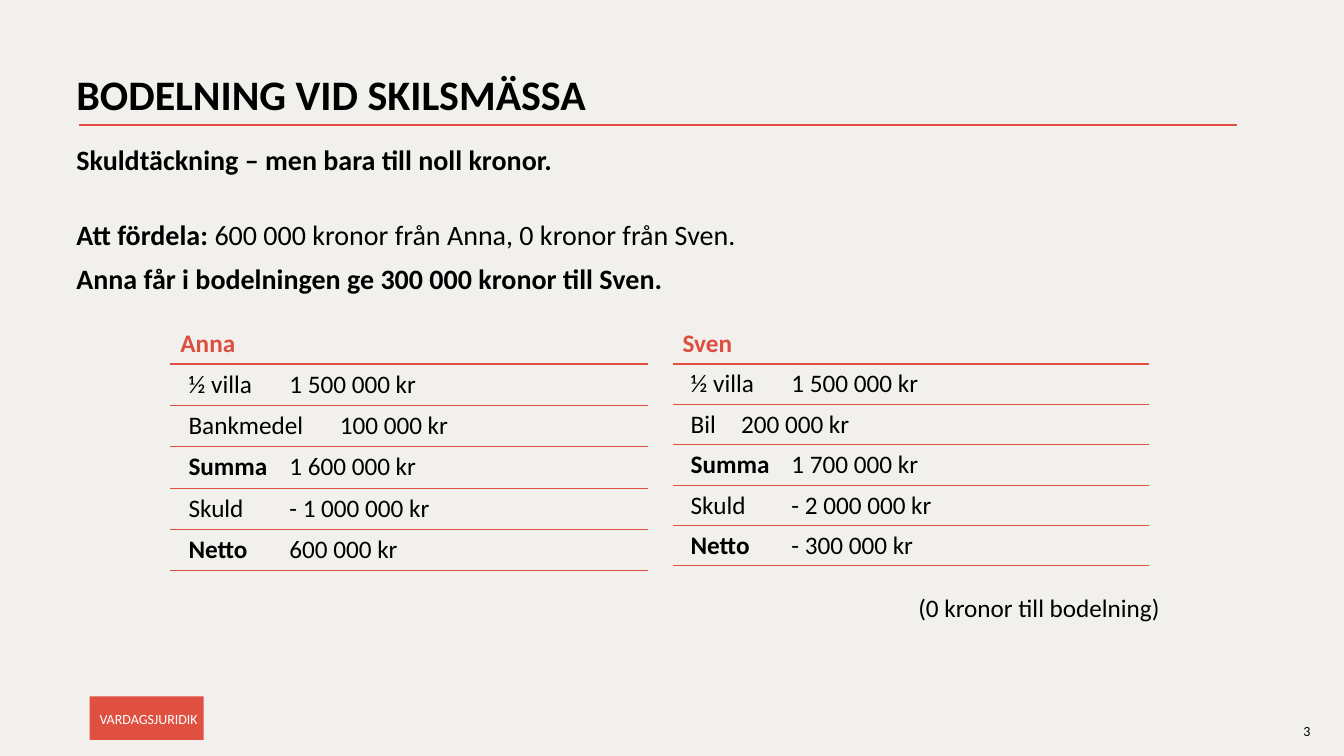
from lxml.etree import SubElement
from pptx import Presentation
from pptx.dml.color import RGBColor
from pptx.enum.shapes import MSO_CONNECTOR as CONNECTOR, MSO_SHAPE as SHAPE
from pptx.enum.text import MSO_ANCHOR as ANCHOR
from pptx.oxml.ns import qn
from pptx.util import Inches, Pt

BACKGROUND = RGBColor(0xF1, 0xF0, 0xEC)
RED = RGBColor(0xE0, 0x50, 0x40)
HEADING_RED = RGBColor(0xDD, 0x4E, 0x3E)
BLACK = RGBColor(0, 0, 0)
WHITE = RGBColor(0xFF, 0xFF, 0xFF)
FONT = "Calibri"
HEADING_HEIGHT = 0.4

INTRODUCTION = [
    ([("Skuldtäckning – men bara till noll kronor.", True)], 0),
    ([("Att fördela: ", True), ("600 000 kronor från Anna, 0 kronor från Sven.", False)], 32),
    ([("Anna får i bodelningen ge 300 000 kronor till Sven.", True)], 10),
]
ANNA = [
    ("½ villa", "1 500 000 kr"),
    ("Bankmedel", "100 000 kr"),
    ("Summa", "1 600 000 kr"),
    ("Skuld", "- 1 000 000 kr"),
    ("Netto", "600 000 kr"),
]
SVEN = [
    ("½ villa", "1 500 000 kr"),
    ("Bil", "200 000 kr"),
    ("Summa", "1 700 000 kr"),
    ("Skuld", "- 2 000 000 kr"),
    ("Netto", "- 300 000 kr"),
]
TOTALS = ("Summa", "Netto")


def write_runs(paragraph, runs, size=18, color=BLACK, line_spacing=None, space_before=0):
    """Add (text, bold) runs to a paragraph."""
    if line_spacing:
        paragraph.line_spacing = line_spacing
    if space_before:
        paragraph.space_before = Pt(space_before)
    for text, bold in runs:
        run = paragraph.add_run()
        run.text = text
        run.font.name = FONT
        run.font.size = Pt(size)
        run.font.bold = bold
        run.font.color.rgb = color


def add_text(slide, box, text, bold=False, anchor=ANCHOR.TOP, **style):
    """Place a one-paragraph text box."""
    frame = slide.shapes.add_textbox(*map(Inches, box)).text_frame
    frame.word_wrap = True
    frame.vertical_anchor = anchor
    write_runs(frame.paragraphs[0], [(text, bold)], **style)


def add_title(slide, box):
    """Place the heading and the rule under it."""
    left, top, width, height = box
    add_text(slide, box, "BODELNING VID SKILSMÄSSA", bold=True, anchor=ANCHOR.MIDDLE,
             size=30, line_spacing=0.9)
    start, rule_top = left + 0.12, top + height - 0.02
    rule = slide.shapes.add_connector(CONNECTOR.STRAIGHT, *map(
        Inches, (start, rule_top, start + width - 0.01, rule_top)))
    rule.line.color.rgb = RED
    rule.line.width = Pt(1.5)
    SubElement(rule._element.spPr, qn("a:effectLst"))


def add_introduction(slide, box):
    """Place the paragraphs above the tables."""
    frame = slide.shapes.add_textbox(*map(Inches, box)).text_frame
    frame.word_wrap = True
    for index, (runs, space_before) in enumerate(INTRODUCTION):
        paragraph = frame.add_paragraph() if index else frame.paragraphs[0]
        write_runs(paragraph, runs, size=20, line_spacing=0.9, space_before=space_before)


def set_borders(cell, top, bottom):
    """Draw red lines above and below a cell, with widths in points."""
    properties = cell._tc.get_or_add_tcPr()
    for tag, width in (("a:lnL", 0), ("a:lnR", 0), ("a:lnT", top), ("a:lnB", bottom)):
        line = SubElement(properties, qn(tag), w=str(Pt(width)))
        if width:
            fill = SubElement(line, qn("a:solidFill"))
            SubElement(fill, qn("a:srgbClr"), val=str(RED))
        else:
            SubElement(line, qn("a:noFill"))
    cell.fill.background()


def add_estate(slide, box, name, entries, row_height):
    """Place the table of one person's assets and debts."""
    table = slide.shapes.add_table(len(entries) + 1, 1, *map(Inches, box)).table
    table.first_row = table.horz_banding = False
    table.rows[0].height = Inches(HEADING_HEIGHT)
    heading = table.cell(0, 0)
    write_runs(heading.text_frame.paragraphs[0], [(name, True)], color=HEADING_RED)
    set_borders(heading, top=0, bottom=1)
    for index, (label, amount) in enumerate(entries, start=1):
        table.rows[index].height = Inches(row_height)
        cell = table.cell(index, 0)
        cell.margin_left = Inches(0.18)
        cell.vertical_anchor = ANCHOR.MIDDLE
        write_runs(cell.text_frame.paragraphs[0],
                   [(label, label in TOTALS), ("\t" + amount, False)])
        set_borders(cell, top=1 if index == 1 else 0.5, bottom=0.5)


def add_badge(slide, box):
    """Place the red subject label."""
    badge = slide.shapes.add_shape(SHAPE.RECTANGLE, *map(Inches, box))
    badge.shadow.inherit = False
    badge.fill.solid()
    badge.fill.fore_color.rgb = RED
    badge.line.fill.background()
    frame = badge.text_frame
    frame.word_wrap = False
    frame.vertical_anchor = ANCHOR.MIDDLE
    frame.margin_left, frame.margin_right = Inches(0.1), Inches(0.06)
    frame.margin_top = Inches(0.08)
    write_runs(frame.paragraphs[0], [("VARDAGSJURIDIK", False)], size=10,
               color=WHITE, line_spacing=0.9)


def main():
    """Build and save the slide."""
    presentation = Presentation()
    presentation.slide_width, presentation.slide_height = Inches(13.33), Inches(7.5)
    slide = presentation.slides.add_slide(presentation.slide_layouts[6])
    slide.background.fill.solid()
    slide.background.fill.fore_color.rgb = BACKGROUND
    add_title(slide, (0.66, 0.66, 11.5, 0.6))
    add_introduction(slide, (0.66, 1.4, 7.84, 1.69))
    add_estate(slide, (1.69, 3.21, 4.74, 2.45), "Anna", ANNA, row_height=0.41)
    add_estate(slide, (6.67, 3.21, 4.73, 2.4), "Sven", SVEN, row_height=0.4)
    add_text(slide, (9.01, 5.83, 2.62, 0.4), "(0 kronor till bodelning)")
    add_badge(slide, (0.89, 6.91, 1.13, 0.43))
    add_text(slide, (12.83, 7.12, 0.4, 0.27), "3", size=10)
    presentation.save("out.pptx")


if __name__ == "__main__":
    main()
